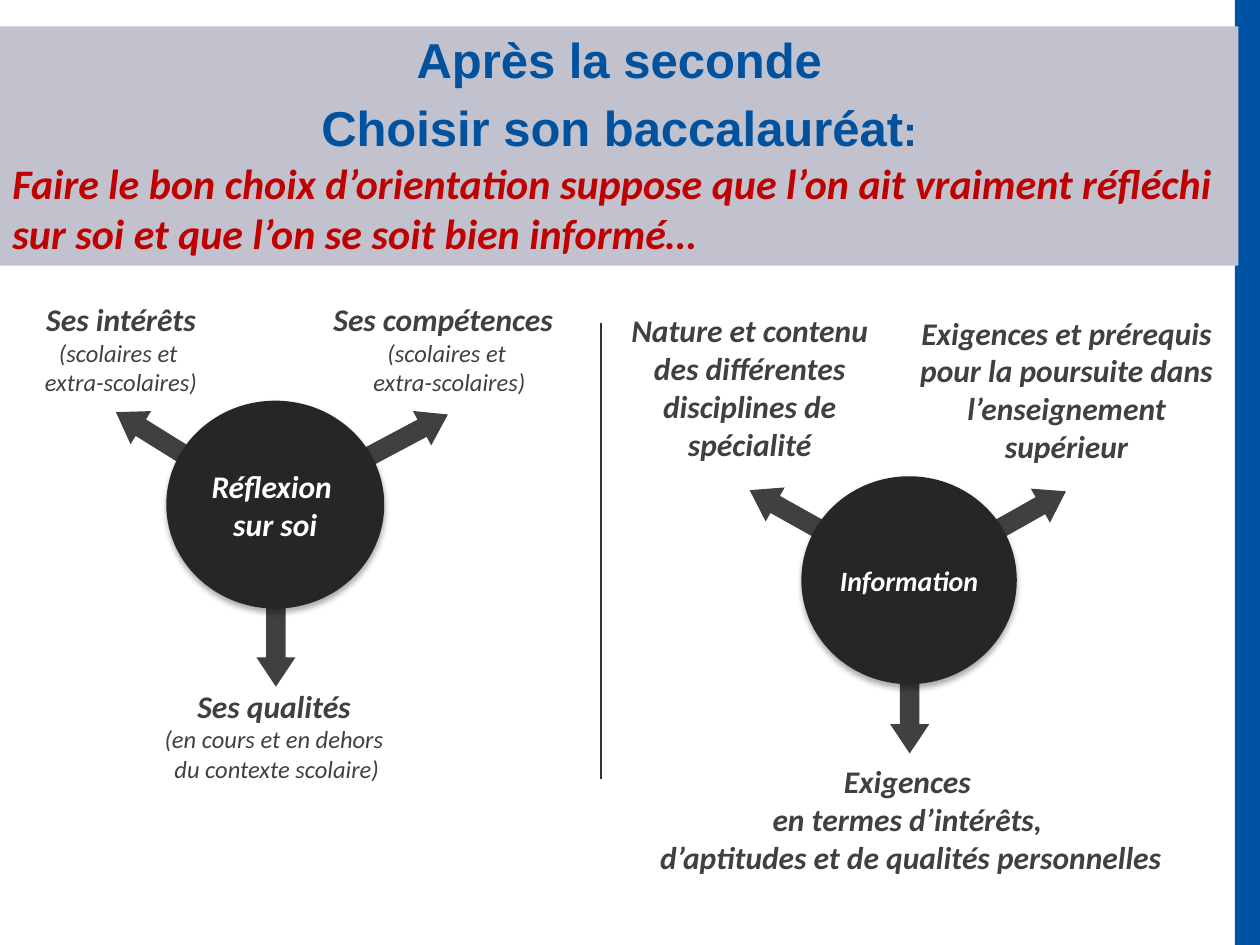
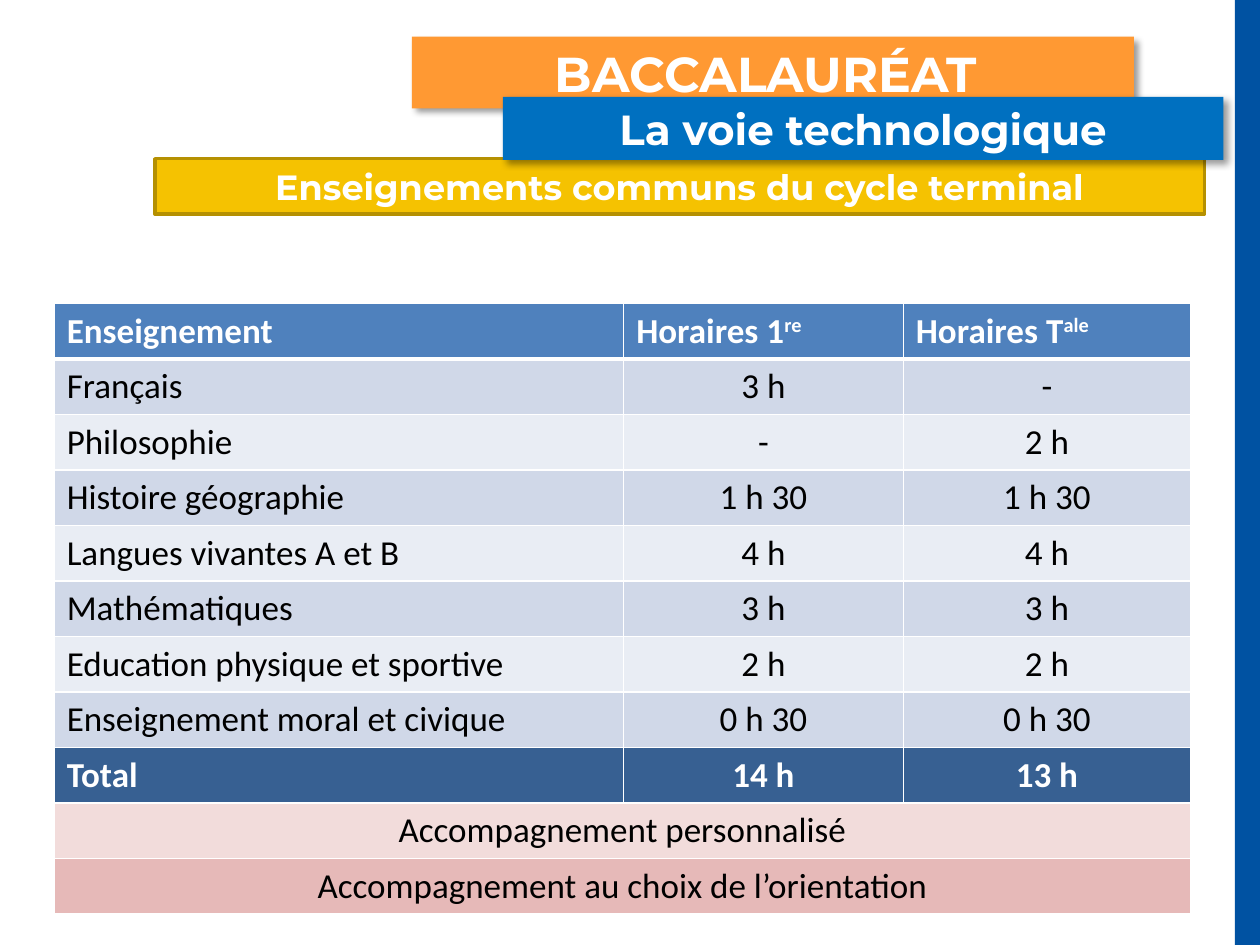
from copy import deepcopy
from dataclasses import dataclass, replace

from lxml.etree import SubElement
from pptx import Presentation
from pptx.dml.color import RGBColor
from pptx.enum.shapes import MSO_CONNECTOR, MSO_SHAPE
from pptx.enum.text import MSO_ANCHOR, PP_ALIGN
from pptx.oxml.ns import qn
from pptx.util import Inches, Pt

WHITE = RGBColor(0xFF, 0xFF, 0xFF)
BLACK = RGBColor(0, 0, 0)
EDGE_BLUE = RGBColor(0x00, 0x52, 0xA2)
TITLE_BLUE = RGBColor(0x00, 0x51, 0x9E)
TITLE_GREY = RGBColor(0xC1, 0xC2, 0xCD)
RED = RGBColor(0xC0, 0x00, 0x00)
DARK_GREY = RGBColor(0x40, 0x40, 0x40)
DIVIDER_GREY = RGBColor(0x33, 0x33, 0x33)
HUB_BLACK = RGBColor(0x26, 0x26, 0x26)
YELLOW = RGBColor(0xF5, 0xC2, 0x01)
YELLOW_EDGE = RGBColor(0xB5, 0x90, 0x01)
ORANGE = RGBColor(0xFF, 0x99, 0x33)
BLUE = RGBColor(0x00, 0x70, 0xC0)
HEADER_BLUE = RGBColor(0x4F, 0x81, 0xBD)
TOTAL_BLUE = RGBColor(0x37, 0x60, 0x92)
BANDS = RGBColor(0xD0, 0xD8, 0xE8), RGBColor(0xE9, 0xED, 0xF4)
SUPPORT_PINKS = RGBColor(0xF2, 0xDC, 0xDB), RGBColor(0xE6, 0xB9, 0xB8)

GRID_COLUMNS, GRID_ROWS = 100, 75
ARROW_LENGTH, ARROW_WIDTH = 9.4, 3.1


@dataclass(frozen=True)
class Ink:
    size: float
    color: RGBColor
    font: str = "Calibri"
    bold: bool = True
    italic: bool = False
    raised: bool = False


@dataclass(frozen=True)
class Shadow:
    opacity: int
    blur: float
    distance: float
    angle: int


TITLE = Ink(28, TITLE_BLUE, "Arial")
MOTTO = Ink(24, RED, italic=True)
LABEL = Ink(18, DARK_GREY, italic=True)
DETAIL = replace(LABEL, size=14, bold=False)
HUB = replace(LABEL, color=WHITE)
BANNER = Ink(28, WHITE, "Montserrat")
TABLE_STRONG = Ink(20, WHITE)
TABLE_PLAIN = Ink(20, BLACK, bold=False)
HUB_SHADOW = Shadow(32, 3.5, 2.2, 90)
BANNER_SHADOW = Shadow(40, 4, 3, 45)


class Deck:
    """Places elements on the current slide, in columns and rows of the grid."""

    def __init__(self):
        self.deck = Presentation()
        self.deck.slide_width, self.deck.slide_height = Inches(10), Inches(7.5)
        self.slide = None

    def x(self, columns):
        return round(self.deck.slide_width * columns / GRID_COLUMNS)

    def y(self, rows):
        return round(self.deck.slide_height * rows / GRID_ROWS)

    def frame(self, left, top, width, height):
        return self.x(left), self.y(top), self.x(width), self.y(height)

    def new_slide(self):
        self.slide = self.deck.slides.add_slide(self.deck.slide_layouts[6])
        self.shape(MSO_SHAPE.RECTANGLE, (98, 0, 2, GRID_ROWS), EDGE_BLUE)

    def shape(self, kind, place, fill, edge=None, shadow=None):
        shape = self.slide.shapes.add_shape(kind, *self.frame(*place))
        shape.shadow.inherit = False
        shape.fill.solid()
        shape.fill.fore_color.rgb = fill
        if edge:
            shape.line.color.rgb = edge
            shape.line.width = Pt(2)
        else:
            shape.line.fill.background()
        if shadow:
            effects = shape._element.spPr.find(qn("a:effectLst"))
            outer = SubElement(
                effects, qn("a:outerShdw"), blurRad=str(Pt(shadow.blur)),
                dist=str(Pt(shadow.distance)), dir=str(shadow.angle * 60000),
                algn="ctr", rotWithShape="0")
            color = SubElement(outer, qn("a:srgbClr"), val=str(BLACK))
            SubElement(color, qn("a:alpha"), val=str(shadow.opacity * 1000))
        shape.text_frame.vertical_anchor = MSO_ANCHOR.MIDDLE
        return shape

    def add_runs(self, paragraph, runs, align=PP_ALIGN.CENTER):
        """Add (text, ink) runs; a newline in a text becomes a line break."""
        paragraph.alignment = align
        for text, ink in runs:
            for number, line in enumerate(text.split("\n")):
                if number:
                    paragraph.add_line_break()
                    paragraph._p[-1].append(deepcopy(run._r.rPr))
                if not line:
                    continue
                run = paragraph.add_run()
                run.text = line
                font = run.font
                font.size, font.name = Pt(ink.size), ink.font
                font.bold, font.italic = ink.bold, ink.italic
                font.color.rgb = ink.color
                if ink.raised:
                    run._r.get_or_add_rPr().set("baseline", "30000")

    def label(self, place, heading, detail=""):
        box = self.slide.shapes.add_textbox(*self.frame(*place))
        box.text_frame.word_wrap = True
        self.add_runs(box.text_frame.paragraphs[0], [(heading, LABEL), (detail, DETAIL)])

    def title_band(self, place, lines, motto):
        text = self.shape(MSO_SHAPE.RECTANGLE, place, TITLE_GREY).text_frame
        text.word_wrap = True
        for number, runs in enumerate(lines):
            paragraph = text.add_paragraph() if number else text.paragraphs[0]
            paragraph.line_spacing = 0.95
            if number:
                paragraph.space_before = Pt(6.5)
            self.add_runs(paragraph, runs)
        self.add_runs(text.add_paragraph(), [(motto, MOTTO)], PP_ALIGN.LEFT)

    def arrow(self, center_x, center_y, rotation):
        place = (center_x - ARROW_LENGTH / 2, center_y - ARROW_WIDTH / 2,
                 ARROW_LENGTH, ARROW_WIDTH)
        arrow = self.shape(MSO_SHAPE.LEFT_ARROW, place, DARK_GREY)
        arrow.adjustments[0], arrow.adjustments[1] = 0.5, 0.75
        arrow.rotation = rotation

    def hub(self, place, name, ink, arrows):
        for arrow in arrows:
            self.arrow(*arrow)
        text = self.shape(MSO_SHAPE.OVAL, place, HUB_BLACK, shadow=HUB_SHADOW).text_frame
        text.margin_left = text.margin_right = 0
        text.word_wrap = True
        self.add_runs(text.paragraphs[0], [(name, ink)])

    def divider(self, column, top, bottom):
        line = self.slide.shapes.add_connector(
            MSO_CONNECTOR.STRAIGHT, self.x(column), self.y(top), self.x(column), self.y(bottom))
        line.line.color.rgb = DIVIDER_GREY
        line.line.width = Pt(1)
        SubElement(line._element.spPr, qn("a:effectLst"))

    def banner(self, place, text, size, fill, edge=None, shadow=None):
        shape = self.shape(MSO_SHAPE.RECTANGLE, place, fill, edge, shadow)
        shape.text_frame.word_wrap = True
        self.add_runs(shape.text_frame.paragraphs[0], [(text, replace(BANNER, size=size))])

    def cell(self, cell, runs, fill, align, top=1, bottom=1):
        properties = cell._tc.get_or_add_tcPr()
        for side, width in zip("LRTB", (1, 1, top, bottom)):
            border = SubElement(properties, qn(f"a:ln{side}"), w=str(Pt(width)))
            color = SubElement(border, qn("a:solidFill"))
            SubElement(color, qn("a:srgbClr"), val=str(WHITE))
        cell.fill.solid()
        cell.fill.fore_color.rgb = fill
        self.add_runs(cell.text_frame.paragraphs[0], runs, align)

    def timetable(self, place, widths, header, subjects, total, support):
        count = 2 + len(subjects) + len(support)
        table = self.slide.shapes.add_table(count, len(widths), *self.frame(*place)).table
        for column, width in zip(table.columns, widths):
            column.width = self.x(width)
        for row in table.rows:
            row.height = self.y(place[3] / count)
        for column, runs in enumerate(header):
            self.cell(table.cell(0, column), runs, HEADER_BLUE, PP_ALIGN.LEFT, bottom=3)
        for row, values in enumerate([*subjects, total], 1):
            is_total = values is total
            ink = TABLE_STRONG if is_total else TABLE_PLAIN
            fill = TOTAL_BLUE if is_total else BANDS[(row - 1) % 2]
            for column, value in enumerate(values):
                align = PP_ALIGN.CENTER if column else PP_ALIGN.LEFT
                self.cell(table.cell(row, column), [(value, ink)], fill, align,
                          top=3 if row == 1 else 1)
        for row, (text, fill) in enumerate(zip(support, SUPPORT_PINKS), count - len(support)):
            merged = table.cell(row, 0)
            merged.merge(table.cell(row, len(widths) - 1))
            self.cell(merged, [(text, TABLE_PLAIN)], fill, PP_ALIGN.CENTER)


def build_choice(deck):
    deck.new_slide()
    deck.title_band(
        (0, 2.1, 98.3, 19),
        [[("Après la seconde", TITLE)],
         [("Choisir son baccalauréat", TITLE), (":", replace(TITLE, size=24))]],
        "Faire le bon choix d’orientation suppose que l’on ait vraiment réfléchi "
        "sur soi et que l’on se soit bien informé…")
    deck.divider(47.7, 25.6, 61.8)

    deck.hub((13.2, 31.8, 17.3, 16.5), "Réflexion \nsur soi", HUB,
             [(21.9, 49.8, 270), (13.2, 35.2, 31.9), (31.4, 35.1, 152)])
    deck.label((0, 23.3, 19.2, 8.8), "Ses intérêts\n", "(scolaires et \nextra-scolaires)")
    deck.label((23.5, 23.3, 23.9, 8.8), "Ses compétences \n",
               "(scolaires et\n extra-scolaires)")
    deck.label((3, 54, 37.5, 8.8), "Ses qualités\n",
               "(en cours et en dehors\n du contexte scolaire)")

    deck.hub((63.6, 37.8, 17.1, 16.5), "Information", replace(HUB, size=16),
             [(72.2, 55.1, 270), (63.6, 41.2, 29.2), (80.5, 41.3, 150.6)])
    deck.label((48.2, 24.2, 22.6, 13.1),
               "Nature et contenu des différentes disciplines de spécialité")
    deck.label((71, 24.4, 27.3, 13.1),
               "Exigences et prérequis pour la poursuite dans l’enseignement supérieur")
    deck.label((50.5, 60, 43.6, 10.1),
               "Exigences \nen termes d’intérêts, \nd’aptitudes et de qualités personnelles")


def build_common_subjects(deck):
    deck.new_slide()
    deck.banner((12.3, 12.6, 83.3, 4.4), "Enseignements communs du cycle terminal",
                20, YELLOW, edge=YELLOW_EDGE)
    deck.banner((32.7, 2.9, 57.3, 5.7), "BACCALAURÉAT ", 28, ORANGE, shadow=BANNER_SHADOW)
    deck.banner((39.9, 7.7, 57.2, 5), "La voie technologique", 24, BLUE, shadow=BANNER_SHADOW)

    superscript = replace(TABLE_STRONG, raised=True)
    deck.timetable(
        (4.3, 24.1, 90.2, 47.7), (45.2, 22.2, 22.8),
        header=[[("Enseignement", TABLE_STRONG)],
                [("Horaires 1", TABLE_STRONG), ("re", superscript)],
                [("Horaires T", TABLE_STRONG), ("ale", superscript)]],
        subjects=[("Français", "3 h", "-"),
                  ("Philosophie", "-", "2 h"),
                  ("Histoire géographie", "1 h 30", "1 h 30"),
                  ("Langues vivantes A et B", "4 h", "4 h"),
                  ("Mathématiques", "3 h", "3 h"),
                  ("Education physique et sportive", "2 h", "2 h"),
                  ("Enseignement moral et civique", "0 h 30", "0 h 30")],
        total=("Total", "14 h", "13 h"),
        support=["Accompagnement personnalisé", "Accompagnement au choix de l’orientation"])


def main():
    deck = Deck()
    build_choice(deck)
    build_common_subjects(deck)
    deck.deck.save("out.pptx")


if __name__ == "__main__":
    main()
